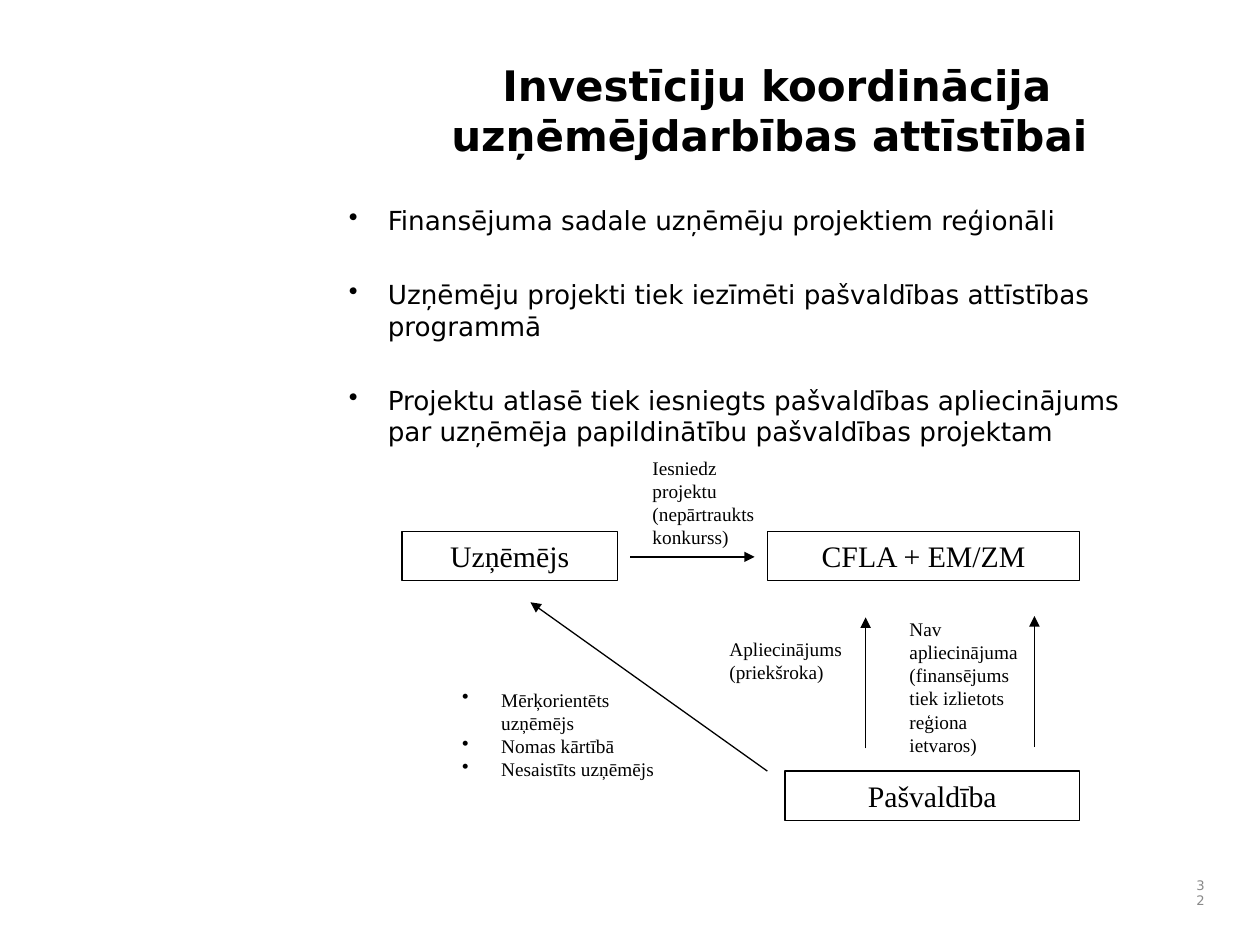
from lxml import etree
from pptx import Presentation, util as u
from pptx.dml.color import RGBColor
from pptx.enum import shapes, text
from pptx.oxml.ns import qn

BLACK, GREY = "000000", "898989"
SANS, SERIF = "DejaVu Sans", "Times New Roman"
LEFT, CENTER, RIGHT = text.PP_ALIGN.LEFT, text.PP_ALIGN.CENTER, text.PP_ALIGN.RIGHT
TOP, MIDDLE = text.MSO_ANCHOR.TOP, text.MSO_ANCHOR.MIDDLE


def rgb(value):
    """Turn a hex string into a colour."""
    return RGBColor.from_string(value)


def within(box, left, top, width, height):
    """Move a rectangle from the box's own origin to the page."""
    return box[0] + left, box[1] + top, width, height


def add_bullet(para):
    """Give a paragraph a round bullet and a hanging indent."""
    indent = u.Inches(0.31)
    properties = para._p.get_or_add_pPr()
    properties.set("marL", str(indent))
    properties.set("indent", str(-indent))
    etree.SubElement(properties, qn("a:buChar")).set("char", "•")


def write(shape, lines, size, font=SERIF, color=BLACK, align=LEFT,
          anchor=TOP, bold=False, bullets=False, gap=0):
    """Fill a shape with one paragraph for each line."""
    frame = shape.text_frame
    frame.word_wrap = True
    frame.vertical_anchor = anchor
    for index, line in enumerate(lines):
        para = frame.add_paragraph() if index else frame.paragraphs[0]
        para.alignment = align
        para.space_before = u.Pt(gap if index else 0)
        if bullets:
            add_bullet(para)
        span = para.add_run()
        span.text = line
        span.font.name = font
        span.font.size = u.Pt(size)
        span.font.bold = bold
        span.font.color.rgb = rgb(color)


def add_text(page, box, lines, size, **style):
    """Place a text box."""
    write(page.shapes.add_textbox(*map(u.Inches, box)), lines, size, **style)


def add_actor(page, box, name):
    """Place an outlined rectangle with the name of an actor."""
    actor = page.shapes.add_shape(shapes.MSO_SHAPE.RECTANGLE, *map(u.Inches, box))
    actor.shadow.inherit = False
    actor.fill.background()
    actor.line.color.rgb = rgb(BLACK)
    actor.line.width = u.Pt(0.75)
    write(actor, [name], 17, align=CENTER)


def add_arrow(page, box, start, end):
    """Draw an arrow between two points of the box."""
    points = [box[0] + start[0], box[1] + start[1], box[0] + end[0], box[1] + end[1]]
    arrow = page.shapes.add_connector(
        shapes.MSO_CONNECTOR.STRAIGHT, *map(u.Inches, points))
    arrow.line.color.rgb = rgb(BLACK)
    arrow.line.width = u.Pt(0.75)
    properties = arrow._element.spPr
    etree.SubElement(properties.find(qn("a:ln")), qn("a:tailEnd")).set("type", "triangle")
    etree.SubElement(properties, qn("a:effectLst"))


def add_diagram(page, box):
    """Draw the actors, the arrows between them and their labels."""
    actors = [
        ("Uzņēmējs", 0, 0.65, 1.71),
        ("CFLA + EM/ZM", 2.9, 0.65, 2.48),
        ("Pašvaldība", 3.04, 2.55, 2.34),
    ]
    arrows = [
        ((1.81, 0.85), (2.8, 0.85)),
        ((3.68, 2.37), (3.68, 1.33)),
        ((5.02, 2.36), (5.02, 1.32)),
        ((2.9, 2.55), (1.02, 1.21)),
    ]
    labels = [
        ("Iesniedz projektu (nepārtraukts konkurss)", 1.89, 0, 1.09, 1.03),
        ("Apliecinājums (priekšroka)", 2.5, 1.44, 1.38, 0.47),
        ("Nav apliecinājuma (finansējums tiek izlietots reģiona ietvaros)",
         3.93, 1.28, 1.06, 1.21),
    ]
    conditions = ["Mērķorientēts uzņēmējs", "Nomas kārtībā", "Nesaistīts uzņēmējs"]
    for name, left, top, width in actors:
        add_actor(page, within(box, left, top, width, 0.39), name)
    for start, end in arrows:
        add_arrow(page, box, start, end)
    for label, *place in labels:
        add_text(page, within(box, *place), [label], 11)
    add_text(page, within(box, 0.38, 1.84, 1.77, 0.84), conditions, 11, bullets=True)


def add_title(page, box):
    """Place the slide title."""
    add_text(page, box, ["Investīciju koordinācija uzņēmējdarbības attīstībai "],
             24, font=SANS, align=CENTER, bold=True)


def add_points(page, box):
    """Place the main bulleted list."""
    points = [
        "Finansējuma sadale uzņēmēju projektiem reģionāli",
        "Uzņēmēju projekti tiek iezīmēti pašvaldības attīstības programmā",
        "Projektu atlasē tiek iesniegts pašvaldības apliecinājums "
        "par uzņēmēja papildinātību pašvaldības projektam",
    ]
    add_text(page, box, points, 15, font=SANS, bullets=True, gap=24.5)


def add_page_number(page, box):
    """Place the page number."""
    add_text(page, box, ["32"], 7.5, font=SANS, color=GREY, align=RIGHT, anchor=MIDDLE)


def main():
    """Build the slide and save it."""
    deck = Presentation()
    deck.slide_width, deck.slide_height = u.Inches(10), u.Inches(7.5)
    page = deck.slides.add_slide(deck.slide_layouts[6])
    add_title(page, (2.83, 0.42, 6.67, 1.13))
    add_page_number(page, (9.33, 6.92, 0.33, 0.33))
    add_diagram(page, (3.19, 3.57))
    add_points(page, (2.67, 1.57, 6.67, 2.15))
    deck.save("out.pptx")


if __name__ == "__main__":
    main()
